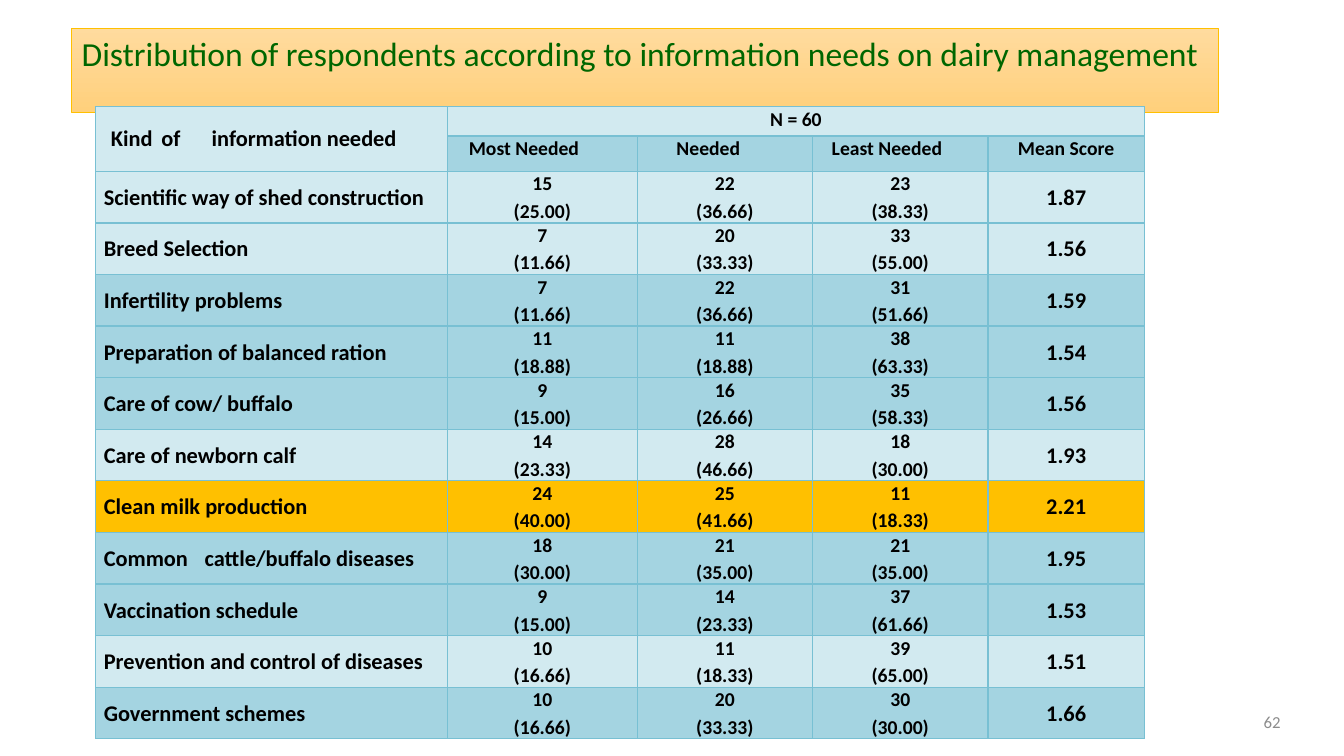
from lxml.etree import SubElement as Sub
from pptx import Presentation
from pptx.dml.color import RGBColor
from pptx.enum.text import MSO_ANCHOR as Anchor, MSO_AUTO_SIZE as Auto, PP_ALIGN as Align
from pptx.oxml.ns import qn
from pptx.util import Inches, Pt

PALE = RGBColor(0xD2, 0xEA, 0xF0)
TEAL = RGBColor(0xA4, 0xD4, 0xE1)
GOLD = RGBColor(0xFF, 0xC0, 0x00)
EDGE = RGBColor(0x78, 0xC0, 0xD3)
SAND = RGBColor(0xFF, 0xDB, 0x9E)
AMBER = RGBColor(0xFF, 0xD0, 0x7C)
GREEN = RGBColor(0x00, 0x66, 0x00)
BLACK = RGBColor(0x00, 0x00, 0x00)
GREY = RGBColor(0x8C, 0x8C, 0x8C)

COLS = (349, 188, 174, 174, 155)
TOP, SUB, BODY = 29, 35, 51
HEADS = (("Most Needed", 0.2), ("Needed", 0.38), ("Least Needed", 0.18), ("Mean Score", 0))
NEEDS = (
    ("Scientific way of shed construction", "15 (25.00)", "22 (36.66)", "23 (38.33)", "1.87", PALE),
    ("Breed Selection", "7 (11.66)", "20 (33.33)", "33 (55.00)", "1.56", PALE),
    ("Infertility problems", "7 (11.66)", "22 (36.66)", "31 (51.66)", "1.59", TEAL),
    ("Preparation of balanced ration", "11 (18.88)", "11 (18.88)", "38 (63.33)", "1.54", TEAL),
    ("Care of cow/ buffalo", "9 (15.00)", "16 (26.66)", "35 (58.33)", "1.56", TEAL),
    ("Care of newborn calf", "14 (23.33)", "28 (46.66)", "18 (30.00)", "1.93", PALE),
    ("Clean milk production", "24 (40.00)", "25 (41.66)", "11 (18.33)", "2.21", GOLD),
    ("Common\tcattle/buffalo diseases", "18 (30.00)", "21 (35.00)", "21 (35.00)", "1.95", TEAL),
    ("Vaccination schedule", "9 (15.00)", "14 (23.33)", "37 (61.66)", "1.53", TEAL),
    ("Prevention and control of diseases", "10 (16.66)", "11 (18.33)", "39 (65.00)", "1.51", PALE),
    ("Government schemes", "10 (16.66)", "20 (33.33)", "30 (30.00)", "1.66", TEAL),
)


def grid(count):
    return Inches(count / 100)


def style(para, size, color, bold=False, align=Align.LEFT):
    para.alignment = align
    font = para.font
    font.name, font.size, font.bold = "Calibri", Pt(size), bold
    font.color.rgb = color


def indent(para, left, tabs=()):
    props = para._p.get_or_add_pPr()
    props.set("marL", str(Inches(left)))
    props.set("indent", "0")
    if tabs:
        stops = Sub(props, qn("a:tabLst"))
        for pos in tabs:
            Sub(stops, qn("a:tab"), pos=str(Inches(pos)), algn="l")


def border(cell):
    props = cell._tc.get_or_add_tcPr()
    for side in ("lnL", "lnR", "lnT", "lnB"):
        line = Sub(props, qn(f"a:{side}"), w=str(Pt(1)))
        fill = Sub(line, qn("a:solidFill"))
        Sub(fill, qn("a:srgbClr"), val=str(EDGE))


def write(cell, text, size=14, align=Align.CENTER, left=0, tabs=(), anchor=Anchor.TOP):
    cell.text = text
    cell.vertical_anchor = anchor
    for num, para in enumerate(cell.text_frame.paragraphs):
        indent(para, left, tabs)
        if num:
            para.space_before = Pt(2.5)
        style(para, size, BLACK, True, align)


def paint(cell, color, pad=(0.01, 0.01, 0.01, 0)):
    border(cell)
    cell.fill.solid()
    cell.fill.fore_color.rgb = color
    sides = map(Inches, pad)
    cell.margin_left, cell.margin_top, cell.margin_right, cell.margin_bottom = sides


def header(table):
    wide = (0.08, 0.04, 0.08, 0.04)
    for col in range(len(COLS)):
        paint(table.cell(0, col), PALE, wide)
        paint(table.cell(1, col), TEAL if col else PALE)
    table.cell(0, 0).merge(table.cell(1, 0))
    table.cell(0, 1).merge(table.cell(0, 4))
    write(table.cell(0, 0), "Kind\tof\tinformation needed", 16, Align.LEFT, 0.07, (0.61, 0.95), Anchor.MIDDLE)
    write(table.cell(0, 1), "N = 60")
    table.cell(0, 1).text_frame.paragraphs[0].line_spacing = Pt(15.1)
    for col, (text, left) in enumerate(HEADS, 1):
        write(table.cell(1, col), text, 14, Align.LEFT if left else Align.CENTER, left)


def body(table):
    for row, (name, *counts, mean, color) in enumerate(NEEDS, 2):
        for col in range(len(COLS)):
            paint(table.cell(row, col), color)
        tabs = (0.86,) if "\t" in name else ()
        write(table.cell(row, 0), name, 16, Align.LEFT, 0.07, tabs, Anchor.MIDDLE)
        for col, count in enumerate(counts, 1):
            write(table.cell(row, col), count.replace(" ", "\n"))
        write(table.cell(row, 4), mean, 16, anchor=Anchor.MIDDLE)


def scores(slide, left, top):
    rows = [TOP, SUB] + [BODY] * len(NEEDS)
    box = map(grid, (left, top, sum(COLS), sum(rows)))
    table = slide.shapes.add_table(len(rows), len(COLS), *box).table
    table.first_row = table.horz_banding = False
    for col, width in zip(table.columns, COLS):
        col.width = grid(width)
    for row, height in zip(table.rows, rows):
        row.height = grid(height)
    header(table)
    body(table)


def banner(slide, *box):
    title = slide.shapes.title
    title.left, title.top, title.width, title.height = map(grid, box)
    title.fill.gradient()
    title.fill.gradient_angle = 270
    for stop, color in zip(title.fill.gradient_stops, (SAND, AMBER)):
        stop.color.rgb = color
    title.line.color.rgb = GOLD
    title.line.width = Pt(0.5)
    frame = title.text_frame
    frame.text = "Distribution of respondents according to information needs on dairy management"
    frame.word_wrap = True
    frame.auto_size = Auto.SHAPE_TO_FIT_TEXT
    frame.vertical_anchor = Anchor.TOP
    style(frame.paragraphs[0], 24, GREEN)


def number(slide, *box):
    frame = slide.shapes.add_textbox(*map(grid, box)).text_frame
    frame.text = "62"
    frame.word_wrap = True
    frame.vertical_anchor = Anchor.MIDDLE
    style(frame.paragraphs[0], 12, GREY, align=Align.RIGHT)


def main():
    deck = Presentation()
    deck.slide_width, deck.slide_height = Inches(13.33), Inches(7.5)
    slide = deck.slides.add_slide(deck.slide_layouts[5])
    number(slide, 980, 696, 300, 40)
    scores(slide, 95, 106)
    banner(slide, 71, 28, 1137, 50)
    deck.save("out.pptx")


if __name__ == "__main__":
    main()
